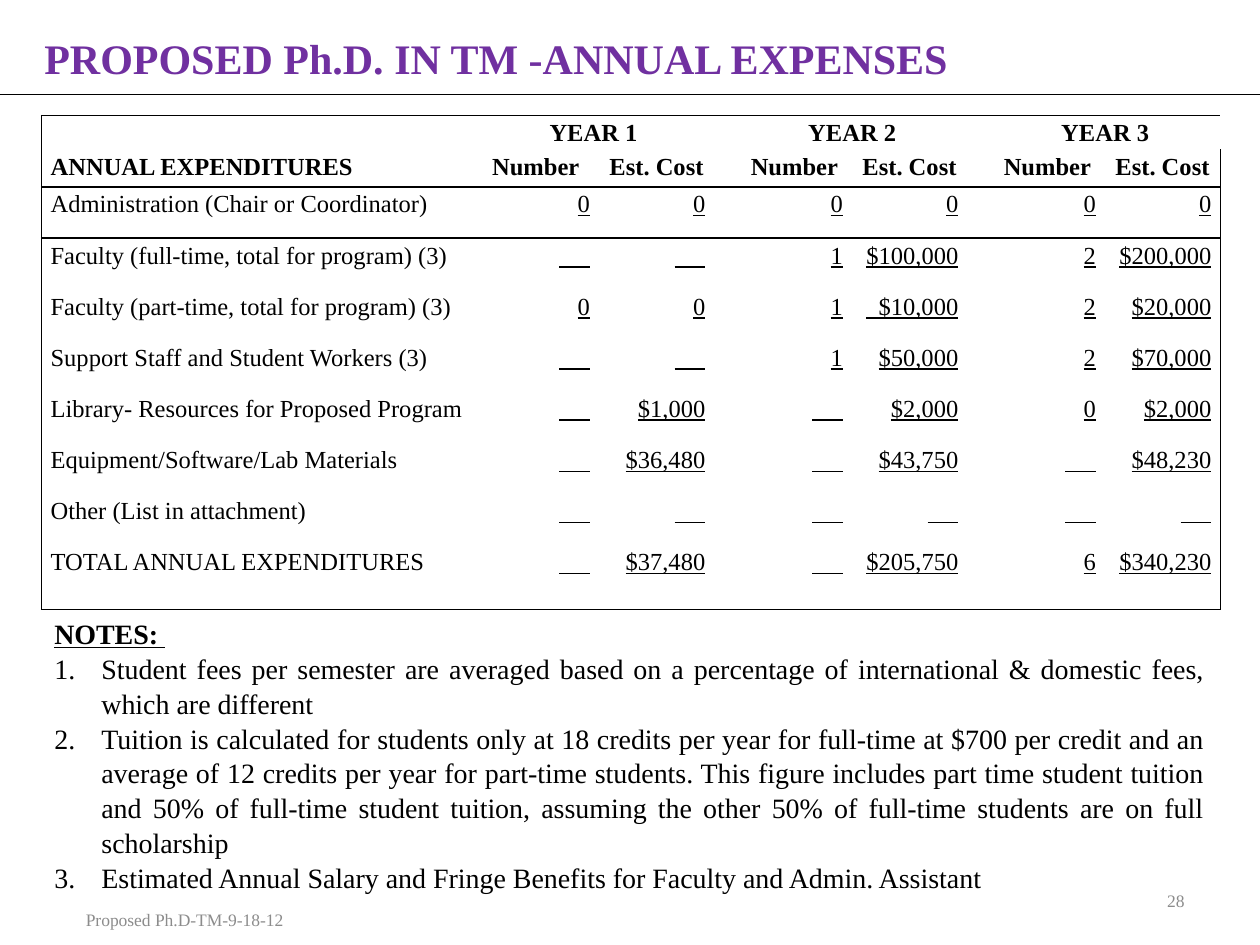
from dataclasses import dataclass

from lxml import etree
from pptx import Presentation
from pptx.dml.color import RGBColor
from pptx.enum import shapes, text
from pptx.oxml import ns
from pptx.util import Cm, Pt


@dataclass(frozen=True)
class Theme:
    font: str = "Times New Roman"
    ink: str = "000000"
    accent: str = "7030A0"
    muted: str = "8C8C8C"
    title: int = 24
    notes: int = 16
    table: int = 14
    footer: int = 10


THEME = Theme()
LEFT, CENTER, RIGHT, JUSTIFY = (
    text.PP_ALIGN.LEFT, text.PP_ALIGN.CENTER, text.PP_ALIGN.RIGHT, text.PP_ALIGN.JUSTIFY)

# Table content: label, then (number, cost) for each year
YEARS = ("YEAR 1", "YEAR 2", "YEAR 3")
EXPENSES = [
    ("Administration (Chair or Coordinator)", ("0", "0"), ("0", "0"), ("0", "0")),
    ("Faculty (full-time, total for program) (3)", ("", ""), ("1", "$100,000"), ("2", "$200,000")),
    ("Faculty (part-time, total for program) (3)", ("0", "0"), ("1", "  $10,000"), ("2", "$20,000")),
    ("Support Staff and Student Workers (3)", ("", ""), ("1", "$50,000"), ("2", "$70,000")),
    ("Library- Resources for Proposed Program", ("", "$1,000"), ("", "$2,000"), ("0", "$2,000")),
    ("Equipment/Software/Lab Materials", ("", "$36,480"), ("", "$43,750"), ("", "$48,230")),
    ("Other (List in attachment)", ("", ""), ("", ""), ("", "")),
    ("TOTAL ANNUAL EXPENDITURES", ("", "$37,480"), ("", "$205,750"), ("6", "$340,230")),
]
BLANK_ENTRY = chr(160) * 5  # underlined, it shows as an unfilled entry
COLUMN_WIDTHS = [8.69, 2.54, 2.33] + [0.43, 2.31, 2.33] * 2
ROW_HEIGHTS = [0.68, 0.76] + [1.03] * 7 + [1.3]

NOTES = [
    "Student fees per semester are averaged based on a percentage of international "
    "& domestic fees, which are different",
    "Tuition is calculated for students only at 18 credits per year for full-time at "
    "$700 per credit and an average of 12 credits per year for part-time students. This "
    "figure includes part time student tuition and 50% of full-time student tuition, "
    "assuming the other 50% of full-time students are on full scholarship",
    "Estimated Annual Salary and Fringe Benefits for Faculty and Admin. Assistant",
]


def place(item, left, top, width, height):
    item.left, item.top, item.width, item.height = map(Cm, (left, top, width, height))


def add_run(paragraph, words, size, color=THEME.ink, bold=False, underline=False):
    run = paragraph.add_run()
    run.text = words
    font = run.font
    font.name, font.size, font.bold, font.underline = THEME.font, Pt(size), bold, underline
    font.color.rgb = RGBColor.from_string(color)


def add_title(slide, words):
    title = slide.shapes.title
    place(title, 0.64, 0.43, 22.86, 1.47)
    title.text_frame.vertical_anchor = text.MSO_ANCHOR.MIDDLE
    heading = title.text_frame.paragraphs[0]
    heading.alignment = LEFT
    add_run(heading, words, THEME.title, THEME.accent, bold=True)


def add_rule(slide, top, width):
    rule = slide.shapes.add_connector(
        shapes.MSO_CONNECTOR.STRAIGHT, 0, Cm(top), width, Cm(top))
    rule.line.width = Pt(0.75)
    rule.line.color.rgb = RGBColor.from_string(THEME.ink)
    etree.SubElement(rule._element.spPr, ns.qn("a:effectLst"))


def add_footer(slide, words, box, alignment):
    footer = slide.shapes.add_textbox(*map(Cm, box))
    frame = footer.text_frame
    frame.word_wrap = True
    frame.vertical_anchor = text.MSO_ANCHOR.MIDDLE
    frame.paragraphs[0].alignment = alignment
    add_run(frame.paragraphs[0], words, THEME.footer, THEME.muted)


def set_borders(cell, sides):
    """Draw the given sides, named in schema order L, R, T, B."""
    properties = cell._tc.get_or_add_tcPr()
    for side in sides:
        line = etree.SubElement(properties, ns.qn(f"a:ln{side}"), w=str(Pt(1)))
        fill = etree.SubElement(line, ns.qn("a:solidFill"))
        etree.SubElement(fill, ns.qn("a:srgbClr"), val=THEME.ink)


def write_cell(cell, words, alignment, **style):
    paragraph = cell.text_frame.paragraphs[0]
    paragraph.alignment = alignment
    add_run(paragraph, words, THEME.table, **style)


def format_grid(table):
    last_row, last_column = len(ROW_HEIGHTS) - 1, len(COLUMN_WIDTHS) - 1
    for r, height in enumerate(ROW_HEIGHTS):
        table.rows[r].height = Cm(height)
        for c in range(last_column + 1):
            cell = table.cell(r, c)
            edges = {"L": c == 0, "R": c == last_column,
                     "T": r in (0, 2), "B": r in (1, last_row)}
            set_borders(cell, [side for side, drawn in edges.items() if drawn])
            cell.fill.background()
            cell.margin_left = cell.margin_right = Cm(0.18)
            cell.margin_top = cell.margin_bottom = 0
            paragraph = cell.text_frame.paragraphs[0]
            paragraph.line_spacing = 1.15
            # Keeps empty cells from stretching their row
            paragraph._p.get_or_add_endParaRPr().set("sz", str(THEME.table * 100))
    for column, width in zip(table.columns, COLUMN_WIDTHS):
        column.width = Cm(width)


def add_expense_table(slide):
    frame = slide.shapes.add_table(
        len(ROW_HEIGHTS), len(COLUMN_WIDTHS), Cm(0.84), Cm(2.33),
        Cm(sum(COLUMN_WIDTHS)), Cm(sum(ROW_HEIGHTS)))
    table = frame.table
    table.first_row = table.horz_banding = False
    style_id = table._tbl.tblPr.find(ns.qn("a:tableStyleId"))
    style_id.text = "{2D5ABB26-0587-4C30-8999-92F81FD0307C}"  # no style, no grid
    format_grid(table)

    # Two header rows
    write_cell(table.cell(1, 0), "ANNUAL EXPENDITURES", LEFT, bold=True)
    for y, year in enumerate(YEARS):
        first = 1 + 3 * y
        table.cell(0, first).merge(table.cell(0, first + 1))
        write_cell(table.cell(0, first), year, CENTER, bold=True)
        for offset, heading in enumerate(("Number", "Est. Cost")):
            write_cell(table.cell(1, first + offset), heading, CENTER, bold=True)

    # Expense rows
    for r, (label, *years) in enumerate(EXPENSES, start=2):
        write_cell(table.cell(r, 0), label, LEFT)
        for y, entries in enumerate(years):
            for offset, entry in enumerate(entries):
                write_cell(table.cell(r, 1 + 3 * y + offset), entry or BLANK_ENTRY,
                           RIGHT, underline=True)


def format_note(paragraph, numbered):
    paragraph.alignment = JUSTIFY
    paragraph.space_before = Pt(0)
    paragraph.line_spacing = 1.04
    properties = paragraph._p.get_or_add_pPr()
    indent = Cm(0.95) if numbered else 0
    properties.set("marL", str(indent))
    properties.set("indent", str(-indent))
    if numbered:
        etree.SubElement(properties, ns.qn("a:buFont"), typeface="+mj-lt")
        etree.SubElement(properties, ns.qn("a:buAutoNum"), type="arabicPeriod")
    else:
        etree.SubElement(properties, ns.qn("a:buNone"))


def add_notes(slide):
    body = slide.placeholders[1]
    place(body, 0.84, 12.27, 23.7, 6.4)
    frame = body.text_frame
    frame.auto_size = text.MSO_AUTO_SIZE.NONE
    frame.vertical_anchor = text.MSO_ANCHOR.TOP
    heading = frame.paragraphs[0]
    format_note(heading, numbered=False)
    add_run(heading, "NOTES: ", THEME.notes, bold=True, underline=True)
    for words in NOTES:
        note = frame.add_paragraph()
        format_note(note, numbered=True)
        add_run(note, words, THEME.notes)


def main():
    deck = Presentation()
    deck.slide_width, deck.slide_height = Cm(25.4), Cm(19.05)
    slide = deck.slides.add_slide(deck.slide_layouts[1])
    add_rule(slide, 1.9, deck.slide_width)
    add_footer(slide, "Proposed Ph.D-TM-9-18-12", (1.48, 18.03, 8.05, 1.02), LEFT)
    add_footer(slide, "28", (18.2, 17.65, 5.93, 1.02), RIGHT)
    add_title(slide, "PROPOSED Ph.D. IN TM -ANNUAL EXPENSES")
    add_expense_table(slide)
    add_notes(slide)
    deck.save("out.pptx")


if __name__ == "__main__":
    main()
